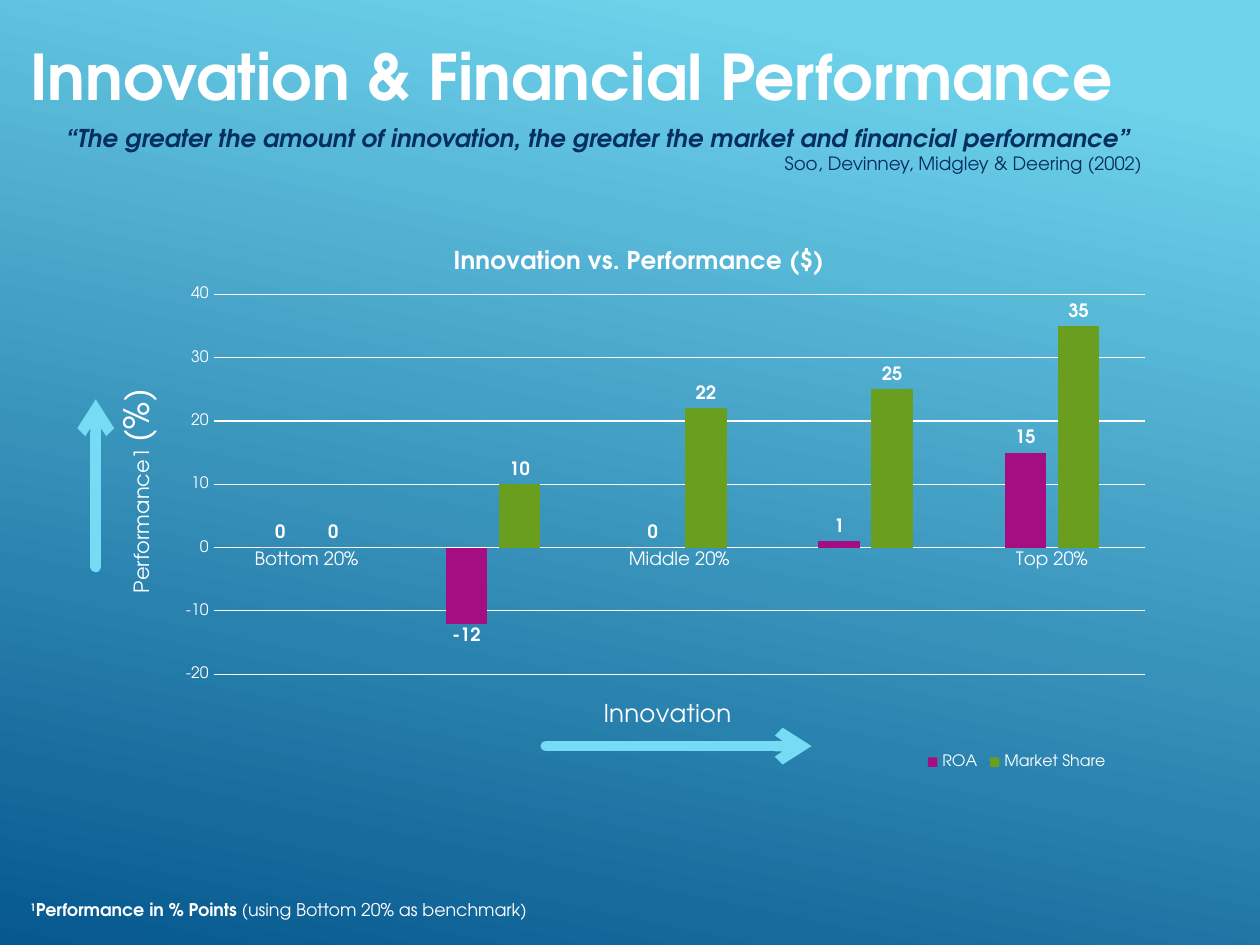
from lxml import etree
from pptx import Presentation
from pptx.chart.data import CategoryChartData
from pptx.dml.color import RGBColor
from pptx.enum.chart import XL_CHART_TYPE, XL_LABEL_POSITION, XL_LEGEND_POSITION, XL_TICK_MARK
from pptx.enum.shapes import MSO_CONNECTOR
from pptx.enum.text import MSO_ANCHOR, PP_ALIGN
from pptx.oxml.ns import qn
from pptx.util import Cm, Pt

COLUMNS = XL_CHART_TYPE.COLUMN_CLUSTERED
OUTSIDE = XL_LABEL_POSITION.OUTSIDE_END
LEGEND_BOTTOM = XL_LEGEND_POSITION.BOTTOM
NO_TICK = XL_TICK_MARK.NONE
STRAIGHT = MSO_CONNECTOR.STRAIGHT
TOP, BOTTOM = MSO_ANCHOR.TOP, MSO_ANCHOR.BOTTOM
LEFT, RIGHT = PP_ALIGN.LEFT, PP_ALIGN.RIGHT


def rgb(color):
    return RGBColor.from_string(color)


def set_font(font, size, color, bold=False, italic=False, name="TeX Gyre Adventor"):
    font.name, font.size = name, Pt(size)
    font.bold, font.italic = bold, italic
    font.color.rgb = rgb(color)


def add_text(p, text, size=10, color="FFFFFF", baseline=0, **style):
    r = p.add_run()
    r.text = text
    set_font(r.font, size, color, **style)
    if baseline:
        r._r.get_or_add_rPr().set("baseline", str(baseline * 1000))


def set_layout(element, x, y, w=None, h=None, inner=False):
    old = element.find(qn("c:layout"))
    if old is not None:
        element.remove(old)
    layout = etree.Element(qn("c:layout"))
    manual = etree.SubElement(layout, qn("c:manualLayout"))
    values = [("xMode", "edge"), ("yMode", "edge"), ("x", x), ("y", y), ("w", w), ("h", h)]
    if inner:
        values.insert(0, ("layoutTarget", "inner"))
    for tag, value in values:
        if value is not None:
            etree.SubElement(manual, qn("c:" + tag)).set("val", str(value))
    overlay = element.find(qn("c:overlay"))
    if overlay is None:
        element.insert(0, layout)
    else:
        overlay.addprevious(layout)


class Deck:
    white, navy, arrow_color = "FFFFFF", "052F61", "76DBF4"

    def __init__(self, width, height):
        self.prs = Presentation()
        self.prs.slide_width, self.prs.slide_height = Cm(width), Cm(height)
        self.s = self.prs.slides.add_slide(self.prs.slide_layouts[6])

    def background(self, stops, angle):
        fill = self.s.background.fill
        fill.gradient()
        fill.gradient_angle = angle
        for stop, (position, color) in zip(fill.gradient_stops, stops):
            stop.position = position
            stop.color.rgb = rgb(color)

    def text(self, x, y, w, h, paragraphs, anchor=TOP):
        tf = self.s.shapes.add_textbox(Cm(x), Cm(y), Cm(w), Cm(h)).text_frame
        tf.word_wrap = True
        tf.vertical_anchor = anchor
        for i, (align, runs) in enumerate(paragraphs):
            p = tf.add_paragraph() if i else tf.paragraphs[0]
            p.alignment = align
            for text, style in runs:
                add_text(p, text, **style)

    def arrow(self, x1, y1, x2, y2):
        sp = self.s.shapes.add_connector(STRAIGHT, Cm(x1), Cm(y1), Cm(x2), Cm(y2))
        sp.line.color.rgb = rgb(self.arrow_color)
        sp.line.width = Pt(6)
        ln = sp.line._get_or_add_ln()
        ln.set("cap", "rnd")
        etree.SubElement(ln, qn("a:tailEnd")).set("type", "arrow")
        etree.SubElement(sp._element.spPr, qn("a:effectLst"))

    def chart_title(self, title, runs, x, y):
        p = title.text_frame.paragraphs[0]
        for text, style in runs:
            add_text(p, text, **style)
        set_layout(title._element, x, y)

    def white_line(self, line):
        line.color.rgb = rgb(self.white)
        line.width = Pt(0.75)

    def chart(self, x, y, w, h, categories, series):
        data = CategoryChartData()
        data.categories = categories
        for name, values, _ in series:
            data.add_series(name, values)
        chart = self.s.shapes.add_chart(COLUMNS, Cm(x), Cm(y), Cm(w), Cm(h), data).chart
        set_font(chart.font, 10, self.white)
        set_layout(chart._chartSpace.chart.plotArea, 0.11, 0.13, 0.87, 0.67, inner=True)
        chart.has_title = True
        self.chart_title(chart.chart_title,
                         [("Innovation vs. Performance ($)", dict(size=14, bold=True))], 0.33, 0.04)

        plot = chart.plots[0]
        plot.gap_width, plot.overlap = 219, -27
        plot.vary_by_categories = False
        for ser, (_, _, color) in zip(plot.series, series):
            ser.format.fill.solid()
            ser.format.fill.fore_color.rgb = rgb(color)
            ser.invert_if_negative = False
            labels = ser.data_labels
            labels.show_value = True
            labels.position = OUTSIDE
            set_font(labels.font, 10.5, self.white, bold=True)

        cat, val = chart.category_axis, chart.value_axis
        for axis, size in ((cat, 10.5), (val, 9)):
            axis.major_tick_mark = axis.minor_tick_mark = NO_TICK
            set_font(axis.tick_labels.font, size, self.white)
        self.white_line(cat.format.line)
        self.chart_title(cat.axis_title, [("Innovation", dict(size=14))], 0.47, 0.84)
        val.minimum_scale, val.maximum_scale, val.major_unit = -20, 40, 10
        val.format.line.fill.background()
        self.white_line(val.major_gridlines.format.line)
        self.chart_title(val.axis_title,
                         [("Performance1 ", dict(size=12)), ("(%)", dict(size=20))], 0.02, 0.29)
        body = val.axis_title.text_frame._txBody.bodyPr
        body.set("rot", "-5400000")
        body.set("vert", "horz")

        chart.has_legend = True
        chart.legend.position = LEGEND_BOTTOM
        chart.legend.include_in_layout = False
        set_font(chart.legend.font, 9, self.white)
        set_layout(chart.legend._element, 0.77, 0.93, 0.18, 0.05)


def main():
    deck = Deck(25.4, 19.05)
    deck.background([(0.1, "6ED2EB"), (1, "06588E")], 258)
    deck.text(0.36, 17.55, 11.28, 1.12, [
        (LEFT, [("1", dict(bold=True, baseline=30)),
                ("Performance in % Points ", dict(bold=True)),
                ("(using Bottom 20% as benchmark)", {})]),
    ], anchor=BOTTOM)
    deck.text(1.07, 2.36, 22.2, 1.3, [
        (LEFT, [("“The greater the amount of innovation, the greater the market and financial performance”",
                 dict(size=14, color=deck.navy, bold=True, italic=True))]),
        (RIGHT, [("Soo, Devinney, Midgley & Deering (2002)", dict(size=10.5, color=deck.navy))]),
    ])
    deck.text(0.36, 0.64, 23.14, 1.8, [
        (LEFT, [("Innovation & Financial Performance", dict(size=36, bold=True))]),
    ])
    deck.arrow(1.93, 11.43, 1.93, 8.05)
    deck.arrow(11, 15.04, 16.36, 15.04)
    deck.chart(1.93, 4.45, 21.59, 11.43, ["Bottom 20%", "", "Middle 20%", "", "Top 20%"], [
        ("ROA", (0, -12, 0, 1, 15), "A50E82"),
        ("Market Share", (0, 10, 22, 25, 35), "6A9E1F"),
    ])
    deck.prs.save("out.pptx")


if __name__ == "__main__":
    main()
